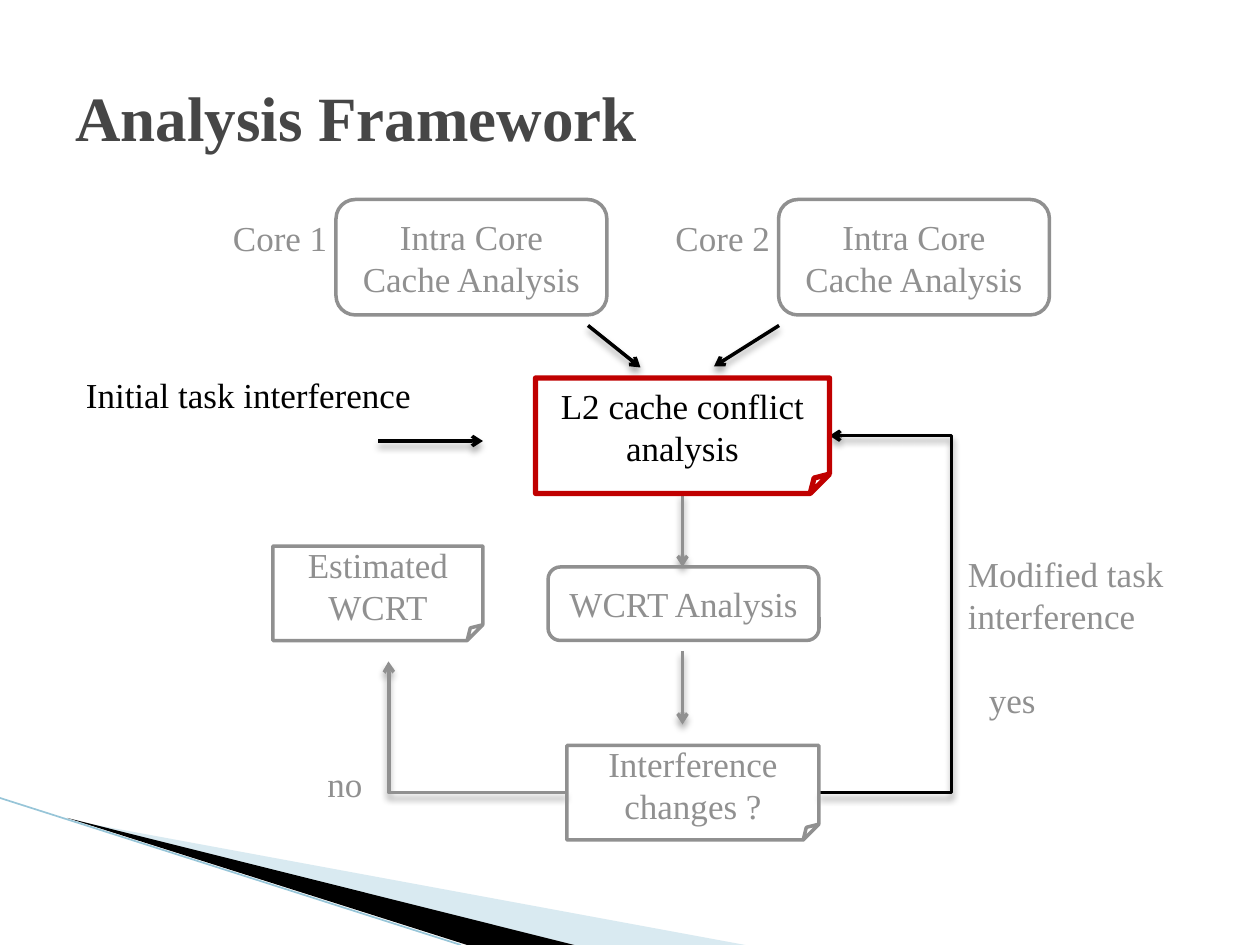
from dataclasses import dataclass

from lxml.etree import SubElement
from pptx import Presentation
from pptx.dml.color import RGBColor
from pptx.enum.shapes import MSO_CONNECTOR, MSO_SHAPE
from pptx.enum.text import MSO_ANCHOR, MSO_AUTO_SIZE, PP_ALIGN
from pptx.oxml.ns import qn
from pptx.util import Inches, Pt


@dataclass(frozen=True)
class Theme:
    font: str = "Times New Roman"
    heading: RGBColor = RGBColor(0x46, 0x46, 0x46)
    muted: RGBColor = RGBColor(0x90, 0x90, 0x90)
    active: RGBColor = RGBColor(0, 0, 0)
    accent: RGBColor = RGBColor(0xC0, 0, 0)
    wave: RGBColor = RGBColor(0xA0, 0xCB, 0xDC)
    wave_edge: RGBColor = RGBColor(0x97, 0xC5, 0xD8)
    heading_size: int = 36
    body_size: int = 20
    line_width: int = 2
    accent_width: int = 3


THEME = Theme()
WIDTH, HEIGHT = Inches(10), Inches(7.5)
COLUMNS, ROWS = 120, 90


def grid(*lengths):
    units = (WIDTH / COLUMNS, HEIGHT / ROWS)
    return [round(length * units[i % 2]) for i, length in enumerate(lengths)]


def write(frame, text, color, size=THEME.body_size, bold=False, align=PP_ALIGN.LEFT):
    font_values = {"name": THEME.font, "size": Pt(size), "bold": bold}
    frame.text = text
    for paragraph in frame.paragraphs:
        paragraph.alignment = align
        for run in paragraph.runs:
            for key, value in font_values.items():
                setattr(run.font, key, value)
            run.font.color.rgb = color


def add_label(slide, area, text, color=THEME.muted, wrap=True):
    frame = slide.shapes.add_textbox(*grid(*area)).text_frame
    frame_values = {"word_wrap": wrap, "auto_size": MSO_AUTO_SIZE.SHAPE_TO_FIT_TEXT}
    for key, value in frame_values.items():
        setattr(frame, key, value)
    write(frame, text, color)


def add_title(slide, area, text):
    frame = slide.shapes.add_textbox(*grid(*area)).text_frame
    frame_values = {"word_wrap": True, "vertical_anchor": MSO_ANCHOR.MIDDLE}
    for key, value in frame_values.items():
        setattr(frame, key, value)
    write(frame, text, THEME.heading, THEME.heading_size, bold=True)


def add_step(slide, kind, area, text, color=THEME.muted, outline=THEME.muted,
             width=THEME.line_width):
    step = slide.shapes.add_shape(kind, *grid(*area))
    step.shadow.inherit = False
    step.fill.background()
    step.line.color.rgb = outline
    step.line.width = Pt(width)
    frame = step.text_frame
    frame_values = {"word_wrap": True, "vertical_anchor": MSO_ANCHOR.MIDDLE}
    for key, value in frame_values.items():
        setattr(frame, key, value)
    write(frame, text, color, align=PP_ALIGN.CENTER)


def add_line(slide, kind, ends, color, width):
    line = slide.shapes.add_connector(kind, *grid(*ends))
    line.line.color.rgb = color
    line.line.width = Pt(width)
    effects = SubElement(line._element.spPr, qn("a:effectLst"))
    return line, effects


def add_arrow(slide, ends, color, turn=None):
    kind = MSO_CONNECTOR.STRAIGHT if turn is None else MSO_CONNECTOR.ELBOW
    arrow, effects = add_line(slide, kind, ends, color, THEME.line_width)
    SubElement(arrow.line._get_or_add_ln(), qn("a:tailEnd"), type="arrow")
    shadow = SubElement(effects, qn("a:outerShdw"), blurRad=str(Pt(4)),
                        dist=str(Pt(3)), dir="5400000", rotWithShape="0")
    shade = SubElement(shadow, qn("a:srgbClr"), val=str(THEME.active))
    SubElement(shade, qn("a:alpha"), val="35000")
    if turn is not None:
        share = (turn - ends[0]) / (ends[2] - ends[0])
        guides = arrow._element.spPr.find(qn("a:prstGeom")).get_or_add_avLst()
        SubElement(guides, qn("a:gd"), name="adj1", fmla=f"val {round(share * 100000)}")


def add_wedge(slide, corners, color, opacity=100):
    start, *others = [grid(*corner) for corner in corners]
    builder = slide.shapes.build_freeform(*start)
    builder.add_line_segments(others, close=True)
    wedge = builder.convert_to_shape()
    wedge.shadow.inherit = False
    wedge.fill.solid()
    wedge.fill.fore_color.rgb = color
    wedge.line.fill.background()
    tint = wedge._element.spPr.find(qn("a:solidFill"))[0]
    SubElement(tint, qn("a:alpha"), val=str(opacity * 1000))


def add_core(slide, number, left):
    add_step(slide, MSO_SHAPE.ROUNDED_RECTANGLE, (left + 11, 19, 25.8, 11),
             "Intra Core Cache Analysis")
    add_label(slide, (left, 20, 12.1, 5.25), f"Core {number}")


def main():
    deck = Presentation()
    deck.slide_width, deck.slide_height = WIDTH, HEIGHT
    slide = deck.slides.add_slide(deck.slide_layouts[6])

    add_wedge(slide, [(6.6, 78.1), (71, ROWS), (54.7, ROWS)], THEME.wave, 40)
    add_wedge(slide, [(6.4, 77.9), (54.7, ROWS), (44.5, ROWS)], THEME.active)
    add_line(slide, MSO_CONNECTOR.STRAIGHT, (0, 76, 43.9, ROWS), THEME.wave_edge, 0.95)
    add_title(slide, (6, 3.6, 108, 15), "Analysis Framework")

    arrows = [
        ((78, 75.5, 79, 41.5), THEME.active, 90.6),
        ((54, 75.5, 37, 63), THEME.muted, 37.05),
        ((65, 62, 65, 69), THEME.muted, None),
        ((65, 47, 65, 54), THEME.muted, None),
        ((56, 31, 61, 35), THEME.active, None),
        ((74.2, 31, 68, 34.9), THEME.active, None),
        ((36, 42, 46, 42), THEME.active, None),
    ]
    for ends, color, turn in arrows:
        add_arrow(slide, ends, color, turn)

    for number, left in enumerate((21, 63.15), start=1):
        add_core(slide, number, left)

    folded = MSO_SHAPE.FOLDED_CORNER
    add_step(slide, folded, (51, 36, 28, 11), "L2 cache conflict analysis",
             THEME.active, THEME.accent, THEME.accent_width)
    add_step(slide, MSO_SHAPE.ROUNDED_RECTANGLE, (52.2, 54, 25.8, 7), "WCRT Analysis")
    add_step(slide, folded, (26, 52, 20, 9), "Estimated WCRT")
    add_step(slide, folded, (54, 71, 24, 9), "Interference changes ?")

    add_label(slide, (7, 35, 37, 5.25), "Initial task interference", THEME.active)
    add_label(slide, (91, 52, 26, 9.3), "Modified task\ninterference")
    add_label(slide, (93, 64, 9.4, 5.25), "yes")
    add_label(slide, (30, 72, 5.8, 5.25), "no", wrap=False)

    deck.save("out.pptx")


if __name__ == "__main__":
    main()
